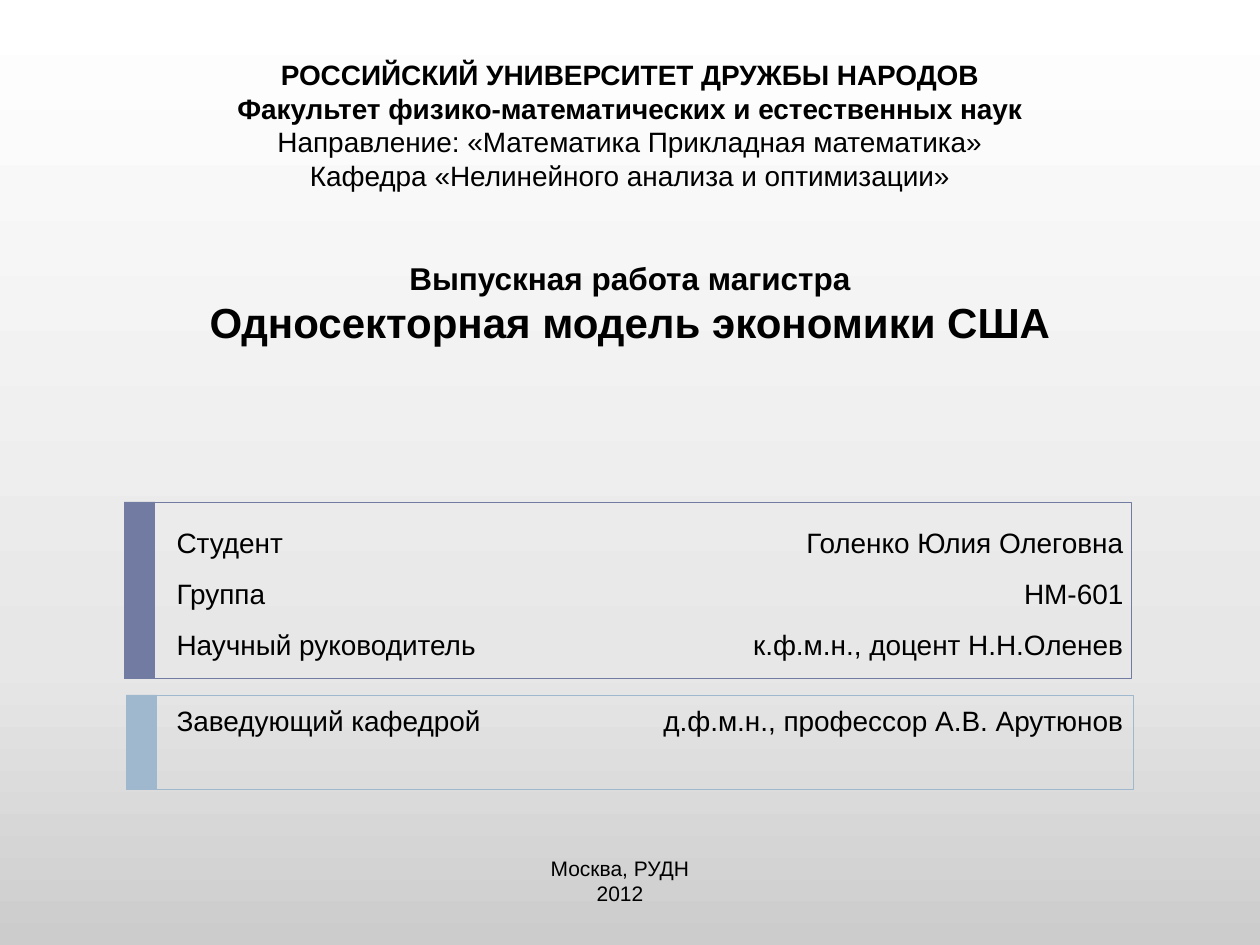
from copy import deepcopy
from typing import NamedTuple

from pptx import Presentation
from pptx.dml.color import RGBColor
from pptx.enum.shapes import MSO_SHAPE
from pptx.enum.text import MSO_ANCHOR, PP_ALIGN
from pptx.oxml.ns import qn
from pptx.util import Emu, Pt

RECT = MSO_SHAPE.RECTANGLE
TOP, BOTTOM = MSO_ANCHOR.TOP, MSO_ANCHOR.BOTTOM
LEFT, CENTER, RIGHT = PP_ALIGN.LEFT, PP_ALIGN.CENTER, PP_ALIGN.RIGHT
FONT = "Arial"
COLORS = {
    "text": "000000", "violet": "727CA3", "blue": "9FB8CD",
    "low": "CCCCCC", "mid": "E7E7E7", "high": "FFFFFF",
}
BAR_W, COL_W, ROW_H = 31, 486, 51


class Box(NamedTuple):
    x: int
    y: int
    w: int
    h: int


class Line(NamedTuple):
    text: str
    size: int
    bold: bool = False
    gap: int = 0


class Panel(NamedTuple):
    box: Box
    color: str
    table_y: int
    rows: list[tuple[str, str]]


TITLE = [
    Line("РОССИЙСКИЙ УНИВЕРСИТЕТ ДРУЖБЫ НАРОДОВ", 16, True),
    Line("Факультет физико-математических и естественных наук", 16, True),
    Line("Направление: «Математика Прикладная математика»", 16),
    Line("Кафедра «Нелинейного анализа и оптимизации»", 16),
    Line("Выпускная работа магистра", 18, True, 38),
    Line("Односекторная модель экономики США", 24, True),
]
FOOTER = [Line("Москва, РУДН", 12), Line("2012", 12)]
PANELS = [
    Panel(Box(124, 502, 1008, 177), "violet", 522, [
        ("Студент", "Голенко Юлия Олеговна"),
        ("Группа", "НМ-601"),
        ("Научный руководитель", "к.ф.м.н., доцент Н.Н.Оленев"),
    ]),
    Panel(Box(126, 695, 1008, 95), "blue", 700, [
        ("Заведующий кафедрой", "д.ф.м.н., профессор А.В. Арутюнов"),
    ]),
]


def px(n: int) -> Emu:
    return Emu(round(n * 914400 / 126))


def place(box: Box) -> list[Emu]:
    return [px(n) for n in box]


def rgb(name: str) -> RGBColor:
    return RGBColor.from_string(COLORS[name])


def add_run(par, line: Line, align) -> None:
    par.alignment = align
    par.space_before = Pt(line.gap)
    run = par.add_run()
    run.text = line.text
    run.font.name = FONT
    run.font.size = Pt(line.size)
    run.font.bold = line.bold
    run.font.color.rgb = rgb("text")


def add_text(slide, box: Box, lines: list[Line], anchor) -> None:
    frame = slide.shapes.add_textbox(*place(box)).text_frame
    frame.word_wrap = True
    frame.vertical_anchor = anchor
    for i, line in enumerate(lines):
        par = frame.add_paragraph() if i else frame.paragraphs[0]
        add_run(par, line, CENTER)


def add_rect(slide, box: Box, color: str, solid: bool) -> None:
    shape = slide.shapes.add_shape(RECT, *place(box))
    shape.shadow.inherit = False
    if solid:
        shape.fill.solid()
        shape.fill.fore_color.rgb = rgb(color)
        shape.line.fill.background()
    else:
        shape.fill.background()
        shape.line.color.rgb = rgb(color)
        shape.line.width = Pt(0.5)


def clear_cell(cell) -> None:
    cell.fill.background()
    props = cell._tc.get_or_add_tcPr()
    for i, side in enumerate(("a:lnL", "a:lnR", "a:lnT", "a:lnB")):
        edge = props.makeelement(qn(side), {"w": "0"})
        edge.append(edge.makeelement(qn("a:noFill"), {}))
        props.insert(i, edge)


def add_rows(slide, panel: Panel) -> None:
    count = len(panel.rows)
    box = Box(164, panel.table_y, 2 * COL_W, count * ROW_H)
    table = slide.shapes.add_table(count, 2, *place(box)).table
    table.first_row = table.horz_banding = False
    for r, row in enumerate(panel.rows):
        table.rows[r].height = px(ROW_H)
        for c, (text, align) in enumerate(zip(row, (LEFT, RIGHT))):
            cell = table.cell(r, c)
            clear_cell(cell)
            add_run(cell.text_frame.paragraphs[0], Line(text, 16), align)


def paint_back(slide) -> None:
    fill = slide.background.fill
    fill.gradient()
    fill.gradient_angle = 90
    stops = slide._element.find(".//" + qn("a:gsLst"))
    stops.append(deepcopy(stops[-1]))
    shades = ((0, "low"), (0.3, "mid"), (1, "high"))
    for stop, (pos, color) in zip(fill.gradient_stops, shades):
        stop.position = pos
        stop.color.rgb = rgb(color)


def main() -> None:
    deck = Presentation()
    deck.slide_width, deck.slide_height = px(1260), px(945)
    slide = deck.slides.add_slide(deck.slide_layouts[6])
    paint_back(slide)

    # Frames first, then the colour bars on their left edges
    for panel in PANELS:
        add_rect(slide, panel.box, panel.color, False)
    for panel in PANELS:
        add_rect(slide, panel.box._replace(w=BAR_W), panel.color, True)

    # Title, people and place
    add_text(slide, Box(144, 45, 972, 308), TITLE, BOTTOM)
    for panel in PANELS:
        add_rows(slide, panel)
    add_text(slide, Box(501, 849, 238, 63), FOOTER, TOP)

    deck.save("out.pptx")


if __name__ == "__main__":
    main()
